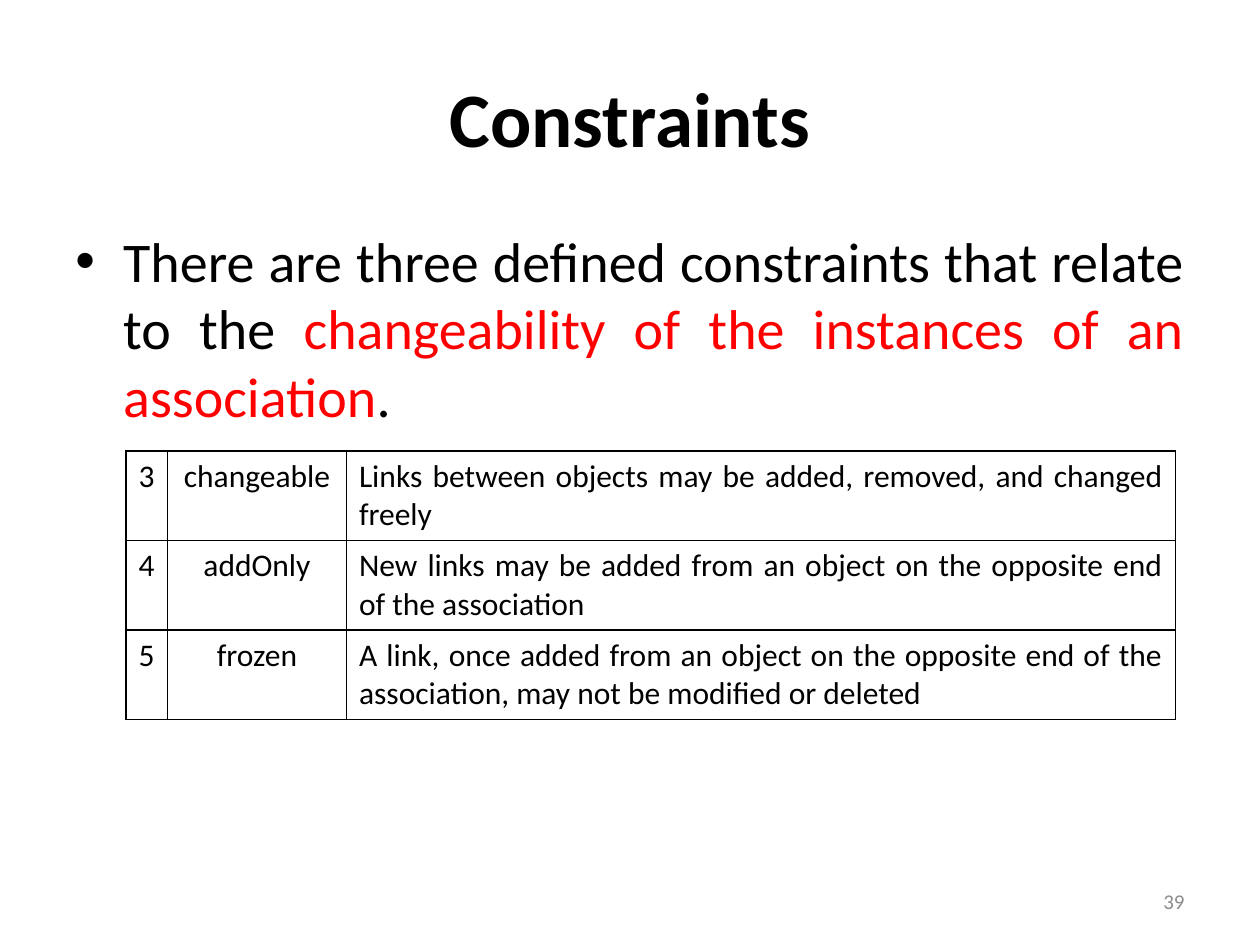
from dataclasses import dataclass

from lxml import etree
from pptx import Presentation
from pptx.dml.color import RGBColor
from pptx.enum.text import MSO_ANCHOR, PP_ALIGN
from pptx.oxml.ns import qn
from pptx.util import Inches, Pt

LEFT, CENTER, RIGHT, JUSTIFY = (
    PP_ALIGN.LEFT, PP_ALIGN.CENTER, PP_ALIGN.RIGHT, PP_ALIGN.JUSTIFY)
TOP, MIDDLE = MSO_ANCHOR.TOP, MSO_ANCHOR.MIDDLE


@dataclass(frozen=True)
class Theme:
    font: str = "Calibri"
    ink: str = "000000"
    accent: str = "FF0000"
    muted: str = "8C8C8C"
    title: int = 44
    body: int = 32
    cell: int = 18
    number: int = 12
    border: int = 1


class SlideBuilder:
    def __init__(self, slide, theme):
        self.s = slide
        self.theme = theme

    def add_runs(self, p, runs, size, align, bold=False):
        """Fill a paragraph with (text, colour) runs."""
        p.alignment = align
        for text, color in runs:
            r = p.add_run()
            r.text = text
            style = {"name": self.theme.font, "size": Pt(size), "bold": bold}
            for name, value in style.items():
                setattr(r.font, name, value)
            r.font.color.rgb = RGBColor.from_string(color)

    def text(self, box, runs, size, align, anchor=MIDDLE, bold=False):
        sp = self.s.shapes.add_textbox(*map(Inches, box))
        tf = sp.text_frame
        tf.word_wrap = True
        tf.vertical_anchor = anchor
        p = tf.paragraphs[0]
        self.add_runs(p, runs, size, align, bold)
        return p

    def bullet(self, box, runs, indent):
        size = self.theme.body
        p = self.text(box, runs, size, JUSTIFY, TOP)
        p.space_before = Pt(size * 0.2)
        pPr = p._p.get_or_add_pPr()
        pPr.set("marL", str(Inches(indent)))
        pPr.set("indent", str(-Inches(indent)))
        etree.SubElement(pPr, qn("a:buFont"), typeface="Arial")
        etree.SubElement(pPr, qn("a:buChar"), char="•")

    def border(self, cell):
        tcPr = cell._tc.get_or_add_tcPr()
        for i, side in enumerate(("lnL", "lnR", "lnT", "lnB")):
            ln = etree.Element(qn(f"a:{side}"), w=str(Pt(self.theme.border)))
            fill = etree.SubElement(ln, qn("a:solidFill"))
            etree.SubElement(fill, qn("a:srgbClr"), val=self.theme.ink)
            tcPr.insert(i, ln)

    def table(self, left, top, widths, row_height, rows, aligns):
        frame = self.s.shapes.add_table(
            len(rows), len(widths), Inches(left), Inches(top),
            Inches(sum(widths)), Inches(row_height * len(rows)))
        table = frame.table
        table.first_row = table.horz_banding = False
        for column, width in zip(table.columns, widths):
            column.width = Inches(width)
        for row, texts in zip(table.rows, rows):
            row.height = Inches(row_height)
            for cell, text, align in zip(row.cells, texts, aligns):
                cell.fill.background()
                self.border(cell)
                self.add_runs(cell.text_frame.paragraphs[0],
                              [(text, self.theme.ink)], self.theme.cell, align)


def main():
    prs = Presentation()
    prs.slide_width, prs.slide_height = Inches(10), Inches(7.5)
    theme = Theme()
    b = SlideBuilder(prs.slides.add_slide(prs.slide_layouts[6]), theme)

    b.text((0.5, 0.3, 9, 1.25), [("Constraints", theme.ink)],
           theme.title, CENTER, bold=True)
    b.bullet((0.5, 1.75, 9, 4.95), [
        ("There are three defined constraints that relate to the ", theme.ink),
        ("changeability of the instances of an association", theme.accent),
        (".", theme.ink),
    ], indent=0.38)
    b.table(1, 3.58, (0.33, 1.42, 6.58), 0.71, [
        ("3", "changeable",
         "Links between objects may be added, removed, and changed freely"),
        ("4", "addOnly",
         "New links may be added from an object on the opposite end of "
         "the association"),
        ("5", "frozen",
         "A link, once added from an object on the opposite end of the "
         "association, may not be modified or deleted"),
    ], (LEFT, CENTER, JUSTIFY))
    b.text((7.17, 6.95, 2.33, 0.4), [("39", theme.muted)], theme.number, RIGHT)
    prs.save("out.pptx")


if __name__ == "__main__":
    main()
